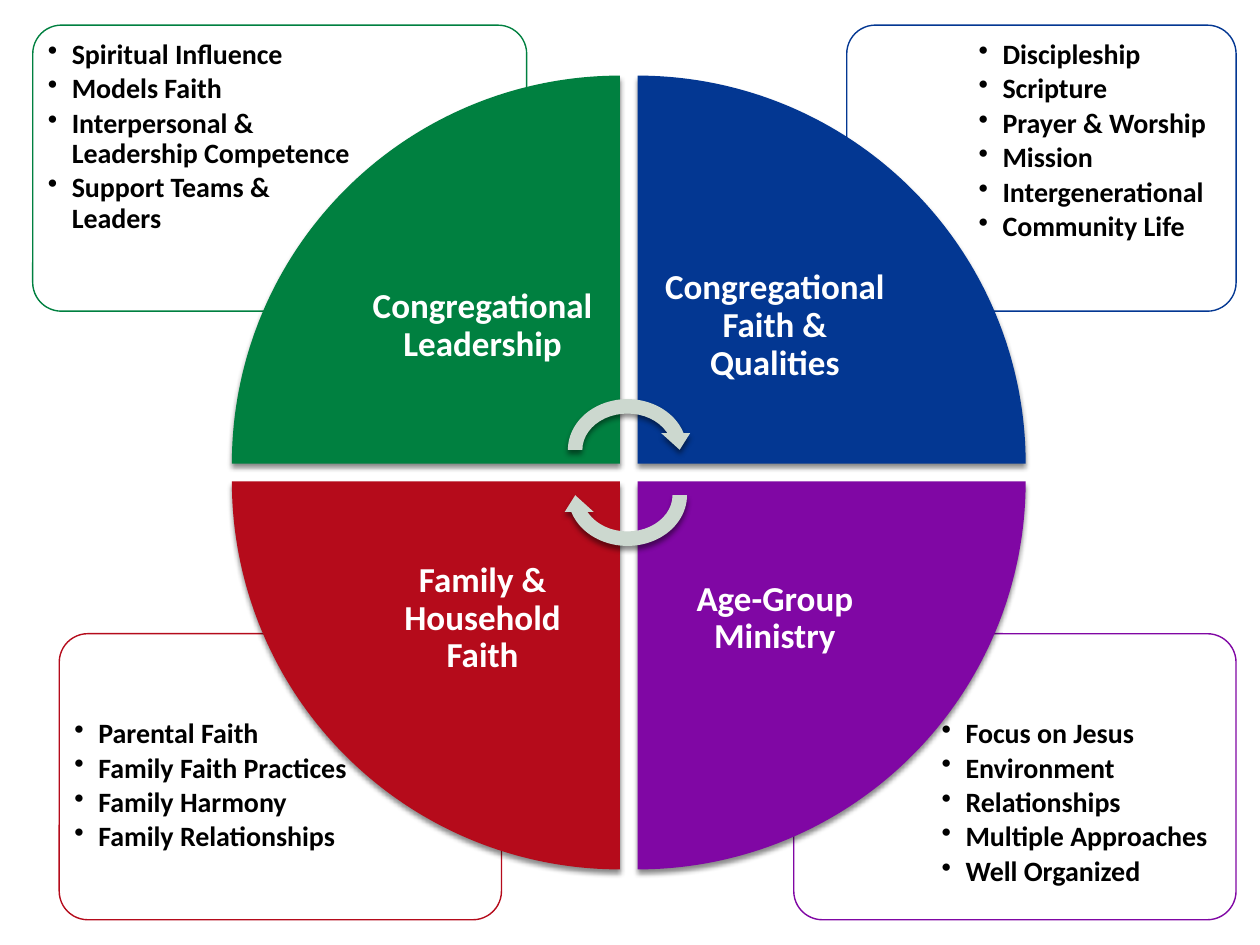
from lxml.etree import SubElement
from pptx import Presentation
from pptx.dml.color import RGBColor
from pptx.enum.shapes import MSO_SHAPE as Shape
from pptx.enum.text import MSO_ANCHOR as Anchor, PP_ALIGN as Align
from pptx.oxml.ns import qn
from pptx.util import Inches, Pt

QUADRANTS = [
    {"label": "Congregational Leadership", "color": "008040", "side": "left", "row": "top",
     "panel": (0.26, 0.2, 3.92),
     "points": ["Spiritual Influence", "Models Faith", "Interpersonal & Leadership Competence",
                "Support Teams & Leaders"]},
    {"label": "Congregational Faith & Qualities", "color": "033792", "side": "right", "row": "top",
     "panel": (6.72, 0.2, 3.09),
     "points": ["Discipleship", "Scripture", "Prayer & Worship", "Mission", "Intergenerational",
                "Community Life"]},
    {"label": "Age-Group Ministry", "color": "8007A4", "side": "right", "row": "bottom",
     "panel": (6.3, 5.03, 3.51),
     "points": ["Focus on Jesus", "Environment", "Relationships", "Multiple Approaches",
                "Well Organized"]},
    {"label": "Family & Household Faith", "color": "B50B1B", "side": "left", "row": "bottom",
     "panel": (0.47, 5.03, 3.51),
     "points": ["Parental Faith", "Family Faith Practices", "Family Harmony",
                "Family Relationships"]},
]
CYCLE_ARROWS = [(3.11, 0), (3.47, 180)]
ARROW_COLOR = "CCD8CF"
CENTER_X, CENTER_Y, HALF_GAP = 4.99, 3.75, 0.07
RADIUS, LABEL_SIZE = 3.08, 2.18
PANEL_HEIGHT, LIST_HEIGHT, PANEL_PAD, LIST_SHARE = 2.27, 1.61, 0.05, 0.7
LIST_FORMAT = {"space_after": Pt(2.4), "line_spacing": 0.9}
LABEL_FORMAT = {"space_after": Pt(7), "line_spacing": 0.9, "alignment": Align.CENTER}


def rgb(color):
    return RGBColor.from_string(color)


def add_filled(slide, kind, box, color, rotation=0):
    shape = slide.shapes.add_shape(kind, *map(Inches, box))
    shape.rotation = rotation
    shape.shadow.inherit = False
    shape.fill.solid()
    shape.fill.fore_color.rgb = rgb(color)
    shape.line.fill.background()
    return shape


def add_shadow(shape):
    effects = shape.element.spPr.find(qn("a:effectLst"))
    shadow = SubElement(effects, qn("a:outerShdw"), blurRad="38100", dist="30000",
                        dir="5400000", rotWithShape="0")
    black = SubElement(shadow, qn("a:srgbClr"), val="000000")
    SubElement(black, qn("a:alpha"), val="45000")


def add_text(slide, box, lines, size, color, inset, paragraph_format, anchor=Anchor.TOP):
    frame = slide.shapes.add_textbox(*map(Inches, box)).text_frame
    frame_format = {"word_wrap": True, "vertical_anchor": anchor}
    frame_format.update({f"margin_{side}": Inches(inset)
                         for side in ("left", "top", "right", "bottom")})
    for name, value in frame_format.items():
        setattr(frame, name, value)
    frame.text = "\n".join(lines)
    for paragraph in frame.paragraphs:
        for name, value in paragraph_format.items():
            setattr(paragraph, name, value)
        font = paragraph.runs[0].font
        for name, value in {"name": "Calibri", "size": Pt(size), "bold": True}.items():
            setattr(font, name, value)
        font.color.rgb = rgb(color)
    return frame


def add_bullets(frame):
    indent = Inches(0.19)
    for paragraph in frame.paragraphs:
        properties = paragraph._p.get_or_add_pPr()
        properties.set("marL", str(indent))
        properties.set("indent", str(-indent))
        SubElement(properties, qn("a:buChar"), char="•")


def add_panel(slide, quadrant):
    left, top, width = quadrant["panel"]
    panel = add_filled(slide, Shape.ROUNDED_RECTANGLE, (left, top, width, PANEL_HEIGHT), "FFFFFF")
    panel.adjustments[0] = 0.1
    panel.line.color.rgb = rgb(quadrant["color"])
    panel.line.width = Pt(0.79)
    white = panel.element.spPr.find(qn("a:solidFill"))[0]
    SubElement(white, qn("a:alpha"), val="90000")

    list_width = width * LIST_SHARE - 2 * PANEL_PAD
    list_left = left + PANEL_PAD
    if quadrant["side"] == "right":
        list_left = left + width - PANEL_PAD - list_width
    list_top = top + PANEL_PAD
    if quadrant["row"] == "bottom":
        list_top = top + PANEL_HEIGHT - PANEL_PAD - LIST_HEIGHT
    add_bullets(add_text(slide, (list_left, list_top, list_width, LIST_HEIGHT),
                         quadrant["points"], 16, "000000", 0.07, LIST_FORMAT))


def inner_box(quadrant, size):
    left = CENTER_X + HALF_GAP if quadrant["side"] == "right" else CENTER_X - HALF_GAP - size
    top = CENTER_Y + HALF_GAP if quadrant["row"] == "bottom" else CENTER_Y - HALF_GAP - size
    return left, top, size, size


def add_wedge(slide, quadrant, rotation):
    add_shadow(add_filled(slide, Shape.PIE_WEDGE, inner_box(quadrant, RADIUS),
                          quadrant["color"], rotation))
    add_text(slide, inner_box(quadrant, LABEL_SIZE), [quadrant["label"]], 20, "FFFFFF", 0.16,
             LABEL_FORMAT, Anchor.MIDDLE)


def main():
    """Build the four-quadrant wheel with a bulleted panel behind each wedge."""
    deck = Presentation()
    deck.slide_width, deck.slide_height = Inches(10), Inches(7.5)
    slide = deck.slides.add_slide(deck.slide_layouts[6])
    for quadrant in reversed(QUADRANTS):
        add_panel(slide, quadrant)
    for turn, quadrant in enumerate(QUADRANTS):
        add_wedge(slide, quadrant, 90 * turn)
    for top, rotation in CYCLE_ARROWS:
        add_shadow(add_filled(slide, Shape.CIRCULAR_ARROW, (4.45, top, 1.06, 0.92),
                              ARROW_COLOR, rotation))
    deck.save("out.pptx")


if __name__ == "__main__":
    main()
